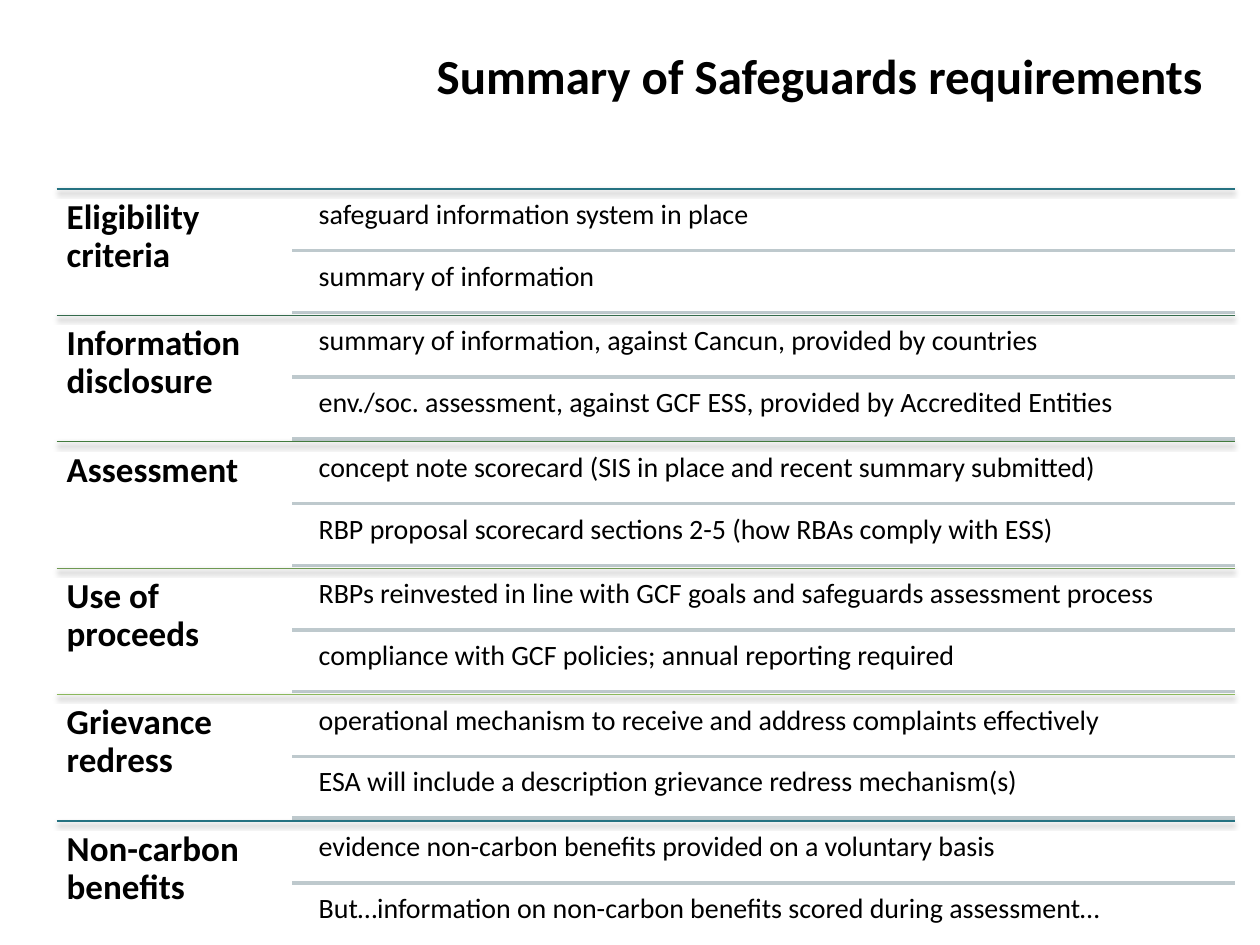
from lxml import etree
from pptx import Presentation
from pptx import util as u
from pptx.dml.color import RGBColor
from pptx.enum import shapes, text
from pptx.oxml import parse_xml
from pptx.oxml.ns import nsdecls, qn

SHADE = (
    f'<a:effectLst {nsdecls("a")}><a:outerShdw blurRad="40000" dist="23000" dir="5400000" '
    'rotWithShape="0"><a:srgbClr val="000000"><a:alpha val="35000"/></a:srgbClr>'
    '</a:outerShdw></a:effectLst>'
)

rows = [
    ("Eligibility criteria", "257281",
     ["safeguard information system in place",
      "summary of information"]),
    ("Information disclosure", "346B4C",
     ["summary of information, against Cancun, provided by countries",
      "env./soc. assessment, against GCF ESS, provided by Accredited Entities"]),
    ("Assessment", "427B3D",
     ["concept note scorecard (SIS in place and recent summary submitted)",
      "RBP proposal scorecard sections 2-5 (how RBAs comply with ESS)"]),
    ("Use of proceeds", "6E9952",
     ["RBPs reinvested in line with GCF goals and safeguards assessment process",
      "compliance with GCF policies; annual reporting required"]),
    ("Grievance redress", "8BB85C",
     ["operational mechanism to receive and address complaints effectively",
      "ESA will include a description grievance redress mechanism(s)"]),
    ("Non-carbon benefits", "257281",
     ["evidence non-carbon benefits provided on a voluntary basis",
      "But…information on non-carbon benefits scored during assessment…"]),
]

deck = Presentation()
deck.slide_width, deck.slide_height = u.Inches(10), u.Inches(7.5)
slide = deck.slides.add_slide(deck.slide_layouts[5])


def write(box, area, words, size, bold, pad):
    box.left, box.top, box.width, box.height = [u.Inches(n) for n in area]
    frame = box.text_frame
    frame.word_wrap = True
    frame.auto_size = text.MSO_AUTO_SIZE.NONE
    frame.vertical_anchor = text.MSO_ANCHOR.TOP
    frame.margin_left = frame.margin_right = u.Inches(pad[0])
    frame.margin_top = frame.margin_bottom = u.Inches(pad[1])
    para = frame.paragraphs[0]
    run = para.add_run()
    run.text = words
    run.font.name, run.font.size, run.font.bold = "Calibri", u.Pt(size), bold
    run.font.color.rgb = RGBColor.from_string("000000")
    return para


def rule(start, end, y, tint, width, shade=False):
    line = slide.shapes.add_connector(
        shapes.MSO_CONNECTOR.STRAIGHT, *[u.Inches(n) for n in (start, y, end, y)])
    line.line.color.rgb = RGBColor.from_string(tint)
    line.line.width = u.Pt(width)
    props = line.element.spPr
    if shade:
        props.append(parse_xml(SHADE))
    else:
        etree.SubElement(props, qn("a:effectLst"))


head = write(slide.shapes.title, (1.98, 0.31, 7.75, 0.57),
             "Summary of Safeguards requirements ", 28, True, (0.1, 0.05))
head.alignment = text.PP_ALIGN.RIGHT

left, right, top = 0.45, 9.8, 1.5
split = left + (right - left) / 5
indent = split + 0.14
pitch = (7.52 - top) / len(rows)
step, gap = 0.49, 0.02

for i, (label, tint, items) in enumerate(rows):
    y = top + i * pitch
    rule(left, right, y, tint, 0.75, True)
    box = slide.shapes.add_textbox(0, 0, 0, 0)
    para = write(box, (left, y, split - left, pitch), label, 20, True, (0.08, 0.08))
    para.line_spacing = 0.9
    for j, item in enumerate(items):
        box = slide.shapes.add_textbox(0, 0, 0, 0)
        area = (indent, y + gap + j * step, right - indent, step - gap)
        para = write(box, area, item, 16, False, (0.07, 0.07))
        para.line_spacing = 0.9
        if (label, j) != (rows[-1][0], 1):
            rule(split, right, y + (j + 1) * step, "BEC9CD", 2)

deck.save("out.pptx")
